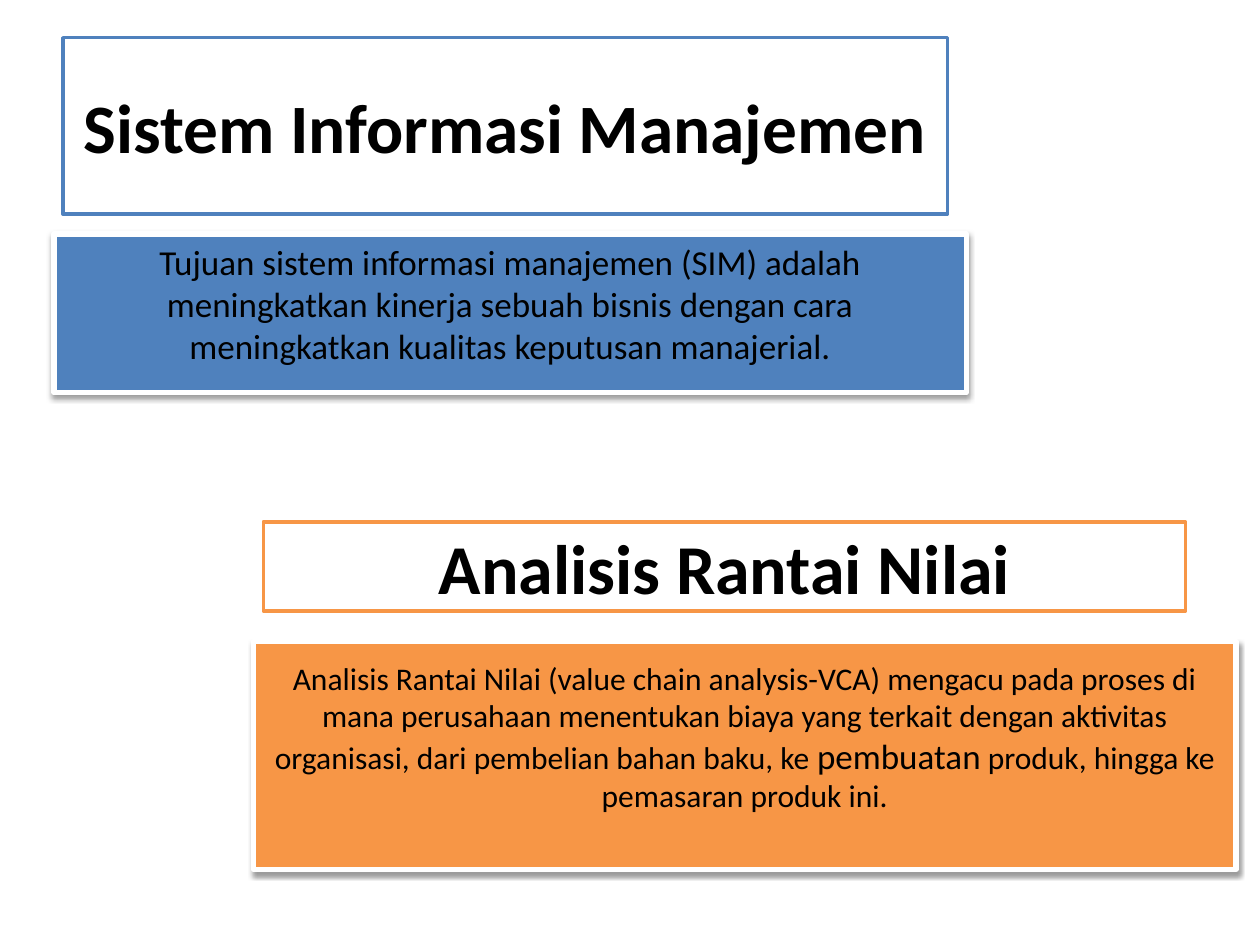
from lxml.etree import SubElement
from pptx import Presentation
from pptx.dml.color import RGBColor
from pptx.enum.shapes import MSO_SHAPE
from pptx.enum.text import MSO_ANCHOR, PP_ALIGN
from pptx.oxml.ns import qn
from pptx.util import Cm, Pt

BLUE = RGBColor(0x4F, 0x81, 0xBD)
ORANGE = RGBColor(0xF7, 0x96, 0x46)
WHITE = RGBColor(0xFF, 0xFF, 0xFF)
BLACK = RGBColor(0x00, 0x00, 0x00)


class TopicSlide:
    """Draws outlined headings and shadowed panels in one style on a page."""

    font = {"name": "Calibri"}
    shadow = {"blurRad": Pt(3.1), "dist": Pt(1.6), "dir": 90 * 60000, "rotWithShape": 0}

    def __init__(self, page):
        self.page = page

    def box(self, place, fill, line, width, spans, bold=False, **frame_format):
        box = self.page.shapes.add_shape(MSO_SHAPE.RECTANGLE, *map(Cm, place))
        box.shadow.inherit = False
        box.fill.solid()
        box.fill.fore_color.rgb = fill
        box.line.color.rgb = line
        box.line.width = Pt(width)
        frame = box.text_frame
        frame_values = {"word_wrap": True, "vertical_anchor": MSO_ANCHOR.MIDDLE}
        for name, value in (frame_values | frame_format).items():
            setattr(frame, name, value)
        para = frame.paragraphs[0]
        para.alignment = PP_ALIGN.CENTER
        for text, size in spans:
            span = para.add_run()
            span.text = text
            span.font.color.rgb = BLACK
            for name, value in (self.font | {"size": Pt(size), "bold": bold}).items():
                setattr(span.font, name, value)
        return box

    def heading(self, place, color, text, size):
        self.box(place, WHITE, color, 2, [(text, size)], bold=True)

    def panel(self, place, color, spans, **frame_format):
        box = self.box(place, color, WHITE, 3, spans, **frame_format)
        effects = box.fill._xPr.find(qn("a:effectLst"))
        values = {name: str(int(value)) for name, value in self.shadow.items()}
        shadow = SubElement(effects, qn("a:outerShdw"), values)
        tint = SubElement(shadow, qn("a:srgbClr"), val=str(BLACK))
        SubElement(tint, qn("a:alpha"), val="38000")


def main():
    deck = Presentation()
    deck.slide_width, deck.slide_height = Cm(25.4), Cm(19.05)
    topics = TopicSlide(deck.slides.add_slide(deck.slide_layouts[6]))

    topics.heading((1.27, 0.76, 17.83, 3.56), BLUE, "Sistem Informasi Manajemen", 39.6)
    topics.panel(
        (1.09, 4.72, 18.39, 3.2),
        BLUE,
        [("Tujuan sistem informasi manajemen (SIM) adalah meningkatkan kinerja "
          "sebuah bisnis dengan cara meningkatkan kualitas keputusan manajerial.", 20)],
        vertical_anchor=MSO_ANCHOR.TOP,
    )
    topics.panel(
        (5.11, 12.93, 19.81, 4.6),
        ORANGE,
        [("Analisis Rantai Nilai (value chain analysis-VCA) mengacu pada proses di mana "
          "perusahaan menentukan biaya yang terkait dengan aktivitas organisasi, "
          "dari pembelian bahan baku, ke ", 18),
         ("pembuatan", 20),
         (" produk, hingga ke pemasaran produk ini.", 18)],
        margin_bottom=Cm(0.9),
    )
    topics.heading((5.31, 10.52, 18.59, 1.8), ORANGE, "Analisis Rantai Nilai", 40)
    deck.save("out.pptx")


if __name__ == "__main__":
    main()
